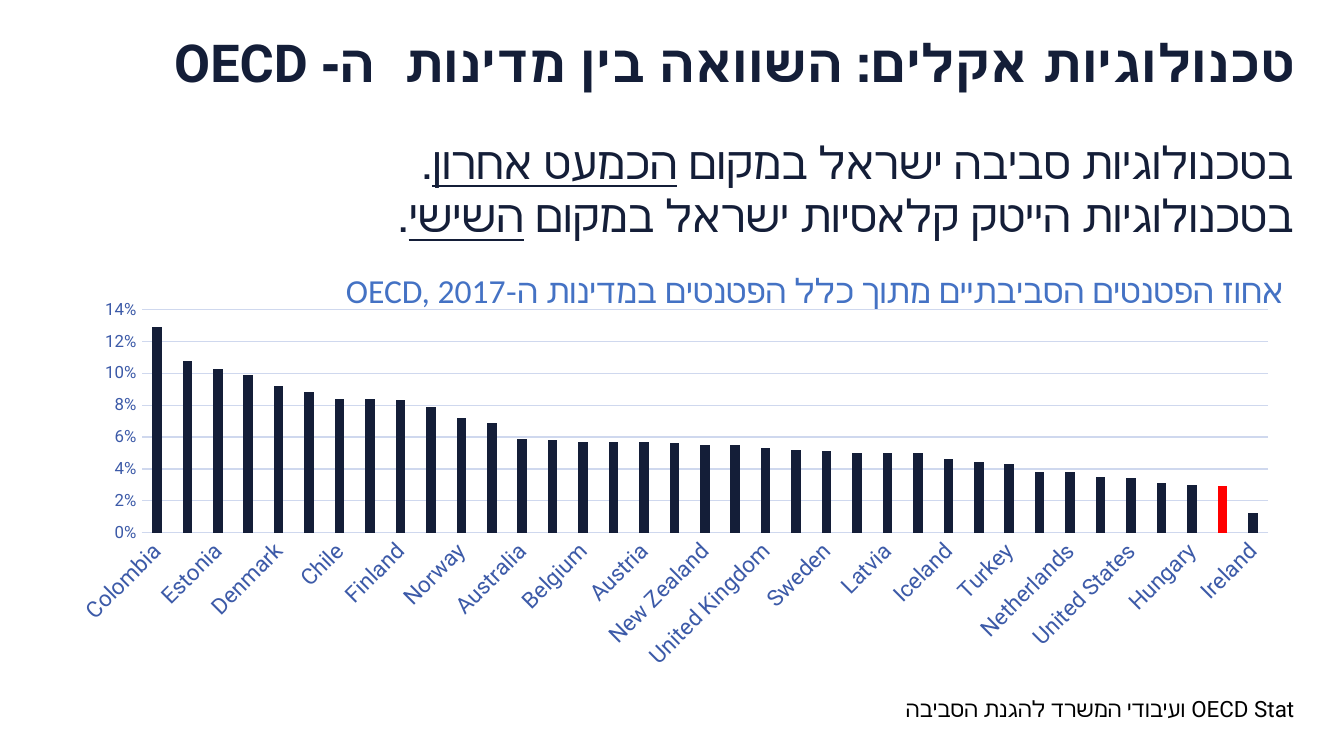
from lxml import etree
from pptx import Presentation
from pptx.chart.data import CategoryChartData
from pptx.dml.color import RGBColor
from pptx.enum.chart import XL_CHART_TYPE, XL_TICK_MARK
from pptx.enum.text import MSO_ANCHOR, PP_ALIGN
from pptx.oxml.ns import qn
from pptx.util import Inches, Pt

COLUMN = XL_CHART_TYPE.COLUMN_CLUSTERED
NO_TICK = XL_TICK_MARK.NONE
MIDDLE = MSO_ANCHOR.MIDDLE
RIGHT = PP_ALIGN.RIGHT

NAVY = RGBColor(0x14, 0x1E, 0x38)
BLUE = RGBColor(0x44, 0x72, 0xC4)
LABEL_BLUE = RGBColor(0x3C, 0x5A, 0xA8)
GRID = RGBColor(0xCF, 0xD8, 0xEE)
RED = RGBColor(0xFF, 0x00, 0x00)
BLACK = RGBColor(0x00, 0x00, 0x00)

HIGHLIGHT = "Israel"
PATENT_SHARES = {
    "Colombia": 0.129, "Lithuania": 0.108, "Estonia": 0.103, "Mexico": 0.099,
    "Denmark": 0.092, "Poland": 0.088, "Chile": 0.084, "Czech Republic": 0.084,
    "Finland": 0.083, "Slovenia": 0.079, "Norway": 0.072, "Spain": 0.069,
    "Australia": 0.059, "Canada": 0.058, "Belgium": 0.057,
    "Slovak Republic": 0.057, "Austria": 0.057, "Germany": 0.056,
    "New Zealand": 0.055, "Luxembourg": 0.055, "United Kingdom": 0.053,
    "France": 0.052, "Sweden": 0.051, "Greece": 0.05, "Latvia": 0.05,
    "Italy": 0.05, "Iceland": 0.046, "Korea": 0.044, "Turkey": 0.043,
    "Japan": 0.038, "Netherlands": 0.038, "Portugal": 0.035,
    "United States": 0.034, "Switzerland": 0.031, "Hungary": 0.03,
    "Israel": 0.029, "Ireland": 0.012,
}

# Each line holds (text, underlined) pieces
MESSAGE = [
    [("בטכנולוגיות סביבה ישראל במקום ", False), ("הכמעט אחרון", True), (".", False)],
    [("בטכנולוגיות הייטק קלאסיות ישראל במקום ", False), ("השישי", True), (".", False)],
]


def set_font(font, name, size, color, bold=False):
    font.name = name
    font.size = Pt(size)
    font.color.rgb = color
    font.bold = bold


def add_rtl_text(slide, box, lines, font, align=RIGHT):
    """Add one right-to-left paragraph and return its shape."""
    shape = slide.shapes.add_textbox(*map(Inches, box))
    shape.text_frame.word_wrap = True
    paragraph = shape.text_frame.paragraphs[0]
    paragraph._p.get_or_add_pPr().set("rtl", "1")
    paragraph.alignment = align
    for index, line in enumerate(lines):
        if index:
            paragraph.add_line_break()
        for text, underlined in line:
            run = paragraph.add_run()
            run.text = text
            if underlined:
                run.font.underline = True
    set_font(paragraph.font, *font)
    return shape


def add_title(slide, box):
    text = "טכנולוגיות אקלים: השוואה בין מדינות  ה- OECD"
    shape = add_rtl_text(slide, box, [[(text, False)]], ("Roboto", 28, NAVY, True))
    shape.text_frame.vertical_anchor = MIDDLE
    shape.text_frame.paragraphs[0].line_spacing = 0.9


def add_message(slide, box):
    add_rtl_text(slide, box, MESSAGE, ("Calibri", 24, NAVY))


def add_chart_heading(slide, box):
    text = "אחוז הפטנטים הסביבתיים מתוך כלל הפטנטים במדינות ה-OECD, 2017"
    add_rtl_text(slide, box, [[(text, False)]], ("Calibri", 18, BLUE))


def add_source_note(slide, box):
    # One em space parts the two sources
    text = "OECD Stat ועיבודי המשרד להגנת הסביבה"
    add_rtl_text(slide, box, [[(text, False)]], ("Roboto", 12, BLACK), align=None)


def set_plot_layout(chart, **fractions):
    """Fix the inner plot area as fractions of the chart frame."""
    plot_area = chart._chartSpace.chart.plotArea
    for old_layout in plot_area.findall(qn("c:layout")):
        plot_area.remove(old_layout)
    layout = etree.Element(qn("c:layout"))
    manual = etree.SubElement(layout, qn("c:manualLayout"))
    settings = {"layoutTarget": "inner", "xMode": "edge", "yMode": "edge", **fractions}
    for tag, value in settings.items():
        etree.SubElement(manual, qn(f"c:{tag}")).set("val", str(value))
    plot_area.insert(0, layout)


def style_category_axis(axis):
    axis.major_tick_mark = axis.minor_tick_mark = NO_TICK
    axis.format.line.color.rgb = GRID
    axis.format.line.width = Pt(0.75)
    set_font(axis.tick_labels.font, "Roboto", 12, LABEL_BLUE)
    # Slanted labels, every second country named
    axis._element.txPr.find(qn("a:bodyPr")).set("rot", "-2700000")
    skip = etree.Element(qn("c:tickLblSkip"))
    skip.set("val", "2")
    axis._element.find(qn("c:noMultiLvlLbl")).addprevious(skip)


def style_value_axis(axis):
    axis.major_tick_mark = axis.minor_tick_mark = NO_TICK
    axis.minimum_scale, axis.maximum_scale, axis.major_unit = 0, 0.14, 0.02
    axis.format.line.fill.background()
    axis.major_gridlines.format.line.color.rgb = GRID
    axis.major_gridlines.format.line.width = Pt(0.75)
    axis.tick_labels.number_format = "0%"
    axis.tick_labels.number_format_is_linked = False
    set_font(axis.tick_labels.font, "Roboto", 9, LABEL_BLUE)


def add_patent_chart(slide, box):
    data = CategoryChartData(number_format="0.0%")
    data.categories = list(PATENT_SHARES)
    data.add_series("Series 1", PATENT_SHARES.values())
    chart = slide.shapes.add_chart(COLUMN, *map(Inches, box), data).chart
    chart.has_title = False
    chart.has_legend = False
    set_font(chart.font, "Roboto", 10, NAVY)
    set_plot_layout(chart, x=0.07, y=0.04, w=0.91, h=0.58)
    style_category_axis(chart.category_axis)
    style_value_axis(chart.value_axis)

    plot = chart.plots[0]
    plot.vary_by_categories = False
    plot.gap_width = 219
    plot.overlap = -27
    series = plot.series[0]
    series.invert_if_negative = False
    series.format.fill.solid()
    series.format.fill.fore_color.rgb = NAVY
    highlight = series.points[list(PATENT_SHARES).index(HIGHLIGHT)].format.fill
    highlight.solid()
    highlight.fore_color.rgb = RED


def main():
    presentation = Presentation()
    # Widescreen, 16 to 9
    presentation.slide_width = Inches(10)
    presentation.slide_height = Inches(10) * 9 // 16
    slide = presentation.slides.add_slide(presentation.slide_layouts[6])
    add_title(slide, (0.24, 0.11, 9.5, 0.76))
    add_message(slide, (0.24, 0.95, 9.48, 4.12))
    add_chart_heading(slide, (1.15, 1.96, 8.5, 0.4))
    add_patent_chart(slide, (0.41, 2.19, 9.21, 2.86))
    add_source_note(slide, (6.64, 5.12, 5.12, 0.3))
    presentation.save("out.pptx")


if __name__ == "__main__":
    main()
